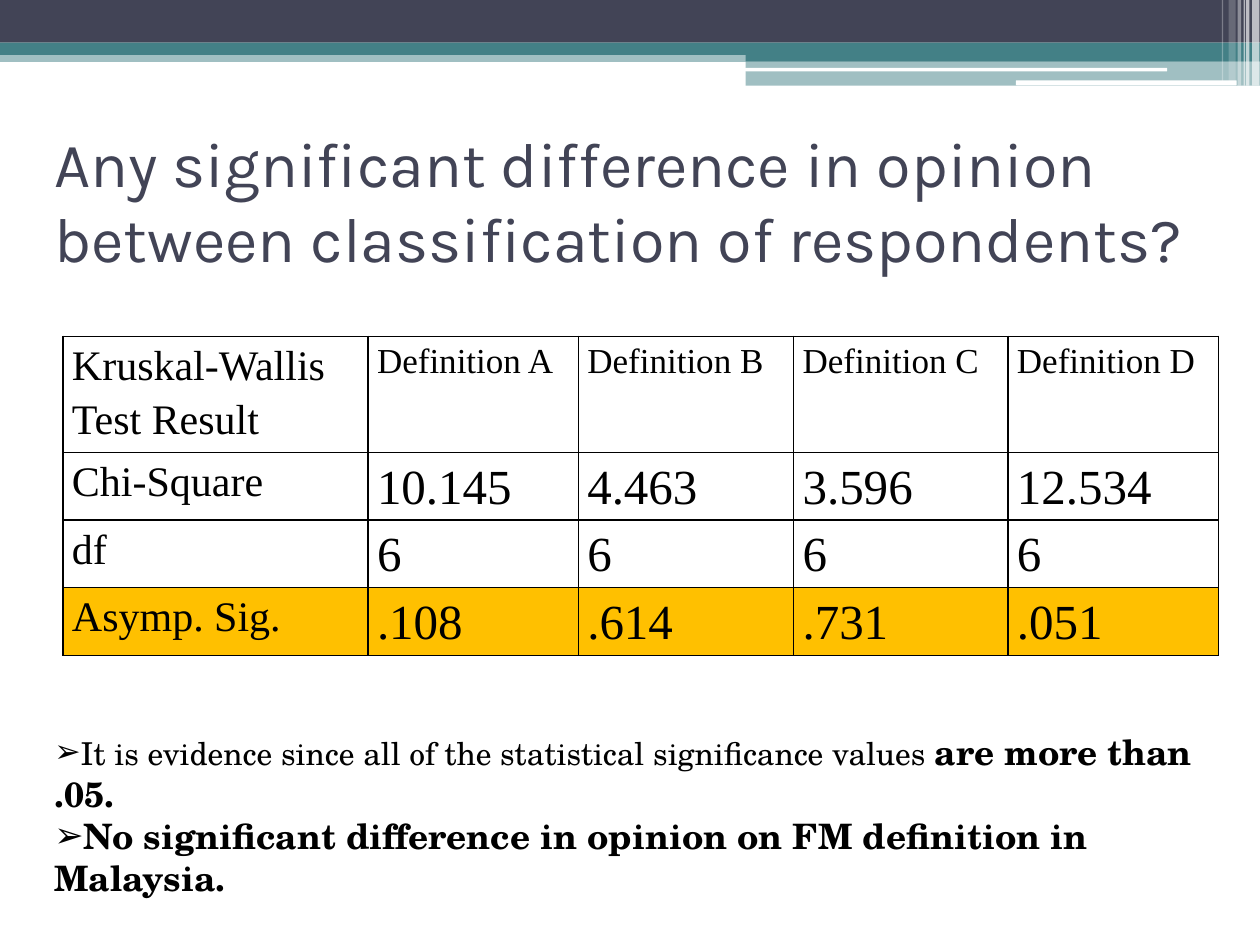
from lxml import etree
from pptx import Presentation
from pptx.dml.color import RGBColor
from pptx.enum.shapes import MSO_SHAPE
from pptx.enum.text import MSO_ANCHOR, MSO_AUTO_SIZE, PP_ALIGN
from pptx.oxml.ns import qn
from pptx.util import Cm, Pt

NAVY, TEAL, WHITE, BLACK, AMBER = "424456", "438086", "FFFFFF", "000000", "FFC000"

TITLE = "Any significant difference in opinion between classification of respondents?"
RESULTS = [
    ["Kruskal-Wallis Test Result", "Definition A", "Definition B", "Definition C", "Definition D"],
    ["Chi-Square", "10.145", "4.463", "3.596", "12.534"],
    ["df", "6", "6", "6", "6"],
    ["Asymp. Sig.", ".108", ".614", ".731", ".051"],
]
COLUMN_WIDTHS = [6.15, 4.24, 4.34, 4.32, 4.24]
ROW_HEIGHTS = [2.15, 1.31, 1.31, 1.31]

# Each finding is a list of (text, size, bold)
FINDINGS = [
    [("It is evidence since all of the statistical significance values ", 18, False),
     ("are more than .05.", 20, True)],
    [("No significant difference in opinion on FM definition in Malaysia.", 20, True)],
]

# left, top, width, height in cm, colour, opacity in percent
BANDS = [
    (0, 1.02, 25.4, 0.23, TEAL, 50),
    (0, 0, 25.4, 0.86, NAVY, 100),
    (0, 0.86, 25.4, 0.25, TEAL, 100),
    (15.03, 1, 10.37, 0.23, TEAL, 100),
    (15.03, 1.23, 10.37, 0.5, TEAL, 50),
]
HIGHLIGHTS = [
    (15.02, 1.37, 8.51, 0.07, WHITE, 100),
    (20.48, 1.62, 4.45, 0.1, WHITE, 100),
]
# left, width, height in cm, opacity in percent
STRIPES = [
    (25.24, 0.15, 1.73, 65), (25.12, 0.07, 1.73, 65), (25.07, 0.03, 1.73, 60),
    (24.95, 0.07, 1.73, 40), (24.77, 0.14, 1.63, 20), (24.63, 0.03, 1.63, 30),
]


def colour(hex_code):
    return RGBColor.from_string(hex_code)


def place(shape, left, top, width, height):
    shape.left, shape.top = Cm(left), Cm(top)
    shape.width, shape.height = Cm(width), Cm(height)


def style(font, name, size, hex_code, bold=False):
    font.name, font.size, font.bold = name, Pt(size), bold
    font.color.rgb = colour(hex_code)


def add_band(slide, preset, left, top, width, height, hex_code, opacity):
    band = slide.shapes.add_shape(preset, Cm(left), Cm(top), Cm(width), Cm(height))
    band.shadow.inherit = False
    band.line.fill.background()
    band.fill.solid()
    band.fill.fore_color.rgb = colour(hex_code)
    if opacity < 100:
        tint = band.fill._xPr.find(".//" + qn("a:srgbClr"))
        etree.SubElement(tint, qn("a:alpha"), val=str(opacity * 1000))


def add_header(slide):
    for band in BANDS:
        add_band(slide, MSO_SHAPE.RECTANGLE, *band)
    for highlight in HIGHLIGHTS:
        add_band(slide, MSO_SHAPE.ROUNDED_RECTANGLE, *highlight)
    for left, width, height, opacity in STRIPES:
        add_band(slide, MSO_SHAPE.RECTANGLE, left, 0, width, height, WHITE, opacity)


def fill_title(title):
    place(title, 0.84, 2.54, 23.93, 2.97)
    frame = title.text_frame
    frame.text = TITLE
    frame.auto_size = MSO_AUTO_SIZE.NONE
    frame.vertical_anchor = MSO_ANCHOR.MIDDLE
    frame.paragraphs[0].alignment = PP_ALIGN.LEFT
    style(frame.paragraphs[0].runs[0].font, "Karla", 36, NAVY)


def border_cell(cell):
    """Draw a 1 pt black line on all four sides; lines must precede the fill."""
    properties = cell._tc.get_or_add_tcPr()
    for position, side in enumerate(("lnL", "lnR", "lnT", "lnB")):
        line = etree.Element(qn("a:" + side), w=str(Pt(1)))
        solid = etree.SubElement(line, qn("a:solidFill"))
        etree.SubElement(solid, qn("a:srgbClr"), val=BLACK)
        properties.insert(position, line)


def add_results(slide):
    frame = slide.shapes.add_table(
        len(RESULTS), len(COLUMN_WIDTHS), Cm(1.27), Cm(6.78),
        Cm(sum(COLUMN_WIDTHS)), Cm(sum(ROW_HEIGHTS)))
    table = frame.table
    table.horz_banding = table.first_row = False
    for column, width in zip(table.columns, COLUMN_WIDTHS):
        column.width = Cm(width)
    for row, height in zip(table.rows, ROW_HEIGHTS):
        row.height = Cm(height)
    for r, values in enumerate(RESULTS):
        for c, value in enumerate(values):
            cell = table.cell(r, c)
            cell.margin_left = cell.margin_right = Cm(0.18)
            cell.margin_top = cell.margin_bottom = 0
            cell.text_frame.text = value
            paragraph = cell.text_frame.paragraphs[0]
            paragraph.line_spacing = 1.15
            size = 24 if c == 0 else 20 if r == 0 else 28
            style(paragraph.runs[0].font, "Times New Roman", size, BLACK)
            if r == len(RESULTS) - 1:
                cell.fill.solid()
                cell.fill.fore_color.rgb = colour(AMBER)
            else:
                cell.fill.background()
            border_cell(cell)


def fill_findings(body):
    place(body, 0.84, 14.6, 24.13, 2.82)
    frame = body.text_frame
    frame.auto_size = MSO_AUTO_SIZE.SHAPE_TO_FIT_TEXT
    for index, finding in enumerate(FINDINGS):
        paragraph = frame.add_paragraph() if index else frame.paragraphs[0]
        properties = paragraph._p.get_or_add_pPr()
        properties.set("marL", "0")
        properties.set("indent", "0")
        etree.SubElement(properties, qn("a:buChar"), char="➢")
        paragraph.space_before = Pt(0)
        for text, size, bold in finding:
            run = paragraph.add_run()
            run.text = text
            style(run.font, "TeX Gyre Schola", size, BLACK, bold)


def main():
    presentation = Presentation()
    presentation.slide_width, presentation.slide_height = Cm(25.4), Cm(19.05)
    slide = presentation.slides.add_slide(presentation.slide_layouts[1])
    add_header(slide)
    fill_title(slide.shapes.title)
    add_results(slide)
    fill_findings(slide.placeholders[1])
    presentation.save("out.pptx")


if __name__ == "__main__":
    main()
